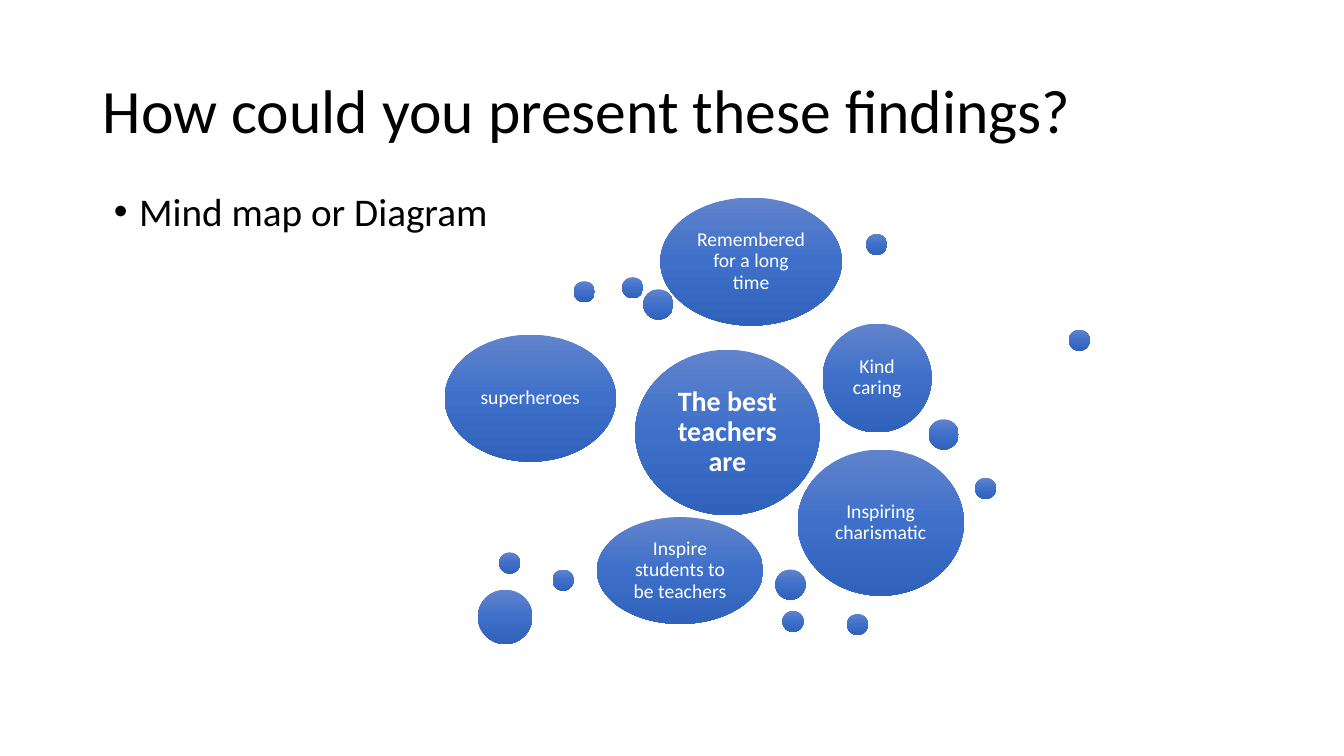
from copy import deepcopy

from pptx import Presentation
from pptx import util as u
from pptx.dml.color import RGBColor
from pptx.enum import shapes, text
from pptx.oxml.ns import qn

INK = {"text": "000000", "label": "FFFFFF",
       "top": "6183CB", "mid": "3E70CA", "low": "3062BB"}

# left, top, width, height, label
BUBBLES = [
    (4.41, 3.32, 1.7, 1.26, "superheroes"),
    (8.16, 3.21, 1.08, 1.08, "Kind caring"),
    (7.91, 4.46, 1.65, 1.45, "Inspiring charismatic"),
    (5.92, 5.13, 1.65, 1.06, "Inspire students to be teachers"),
    (6.55, 1.96, 1.8, 1.27, "Remembered for a long time"),
]

# diameter: (left, top) of each dot
DOTS = {
    0.21: [(6.7, 5.42), (10.6, 3.27), (6.17, 2.75), (5.48, 5.65),
           (4.95, 5.48), (8.4, 6.09), (9.67, 4.74), (7.76, 6.06),
           (5.69, 2.79), (8.59, 2.32)],
    0.3: [(7.69, 5.65), (6.38, 2.87), (9.21, 4.16)],
    0.54: [(4.74, 5.85)],
}


class Deck:
    font = "Calibri"

    def __init__(self, prs):
        self.slide = prs.slides.add_slide(prs.slide_layouts[1])

    def label(self, frame, words, size, ink, align, bold=False):
        frame.word_wrap = True
        frame.auto_size = text.MSO_AUTO_SIZE.NONE
        para = frame.paragraphs[0]
        para.alignment = align
        para.line_spacing = 0.9
        run = para.add_run()
        run.text = words
        run.font.name = self.font
        run.font.size = u.Pt(size)
        run.font.bold = bold
        run.font.color.rgb = RGBColor.from_string(INK[ink])
        return para

    def place(self, holder, box):
        holder.left, holder.top, holder.width, holder.height = map(u.Inches, box)

    def title(self, words, box):
        holder = self.slide.shapes.title
        self.place(holder, box)
        holder.text_frame.vertical_anchor = text.MSO_ANCHOR.MIDDLE
        self.label(holder.text_frame, words, 44, "text", text.PP_ALIGN.LEFT)

    def body(self, words, box):
        holder = self.slide.placeholders[1]
        self.place(holder, box)
        para = self.label(holder.text_frame, words, 28, "text", text.PP_ALIGN.LEFT)
        para.space_before = u.Pt(10)
        props = para._p.get_or_add_pPr()
        props.set("marL", str(u.Inches(0.25)))
        props.set("indent", str(u.Inches(-0.25)))

    def ball(self, *box):
        """Draw an ellipse shaded from top to bottom in three stops."""
        ball = self.slide.shapes.add_shape(
            shapes.MSO_SHAPE.OVAL, *map(u.Inches, box))
        ball.shadow.inherit = False
        ball.line.fill.background()
        ball.fill.gradient()
        ball.fill.gradient_angle = 270
        stops = ball._element.spPr.find(".//" + qn("a:gsLst"))
        stops.insert(1, deepcopy(stops[0]))
        for i, (stop, ink) in enumerate(
                zip(ball.fill.gradient_stops, ("top", "mid", "low"))):
            stop.position = i / 2
            stop.color.rgb = RGBColor.from_string(INK[ink])
        return ball

    def bubble(self, *box, words, size=14, pad=0.06, bold=False):
        frame = self.ball(*box).text_frame
        frame.margin_left = frame.margin_right = u.Inches(pad)
        frame.margin_top = frame.margin_bottom = u.Inches(pad)
        frame.vertical_anchor = text.MSO_ANCHOR.MIDDLE
        self.label(frame, words, size, "label", text.PP_ALIGN.CENTER, bold)


def main():
    prs = Presentation()
    prs.slide_width, prs.slide_height = u.Inches(13.33), u.Inches(7.5)
    deck = Deck(prs)
    deck.title("How could you present these findings?", (0.92, 0.4, 11.5, 1.45))
    deck.body("Mind map or Diagram", (1.03, 1.86, 4.4, 4.76))
    for size, spots in DOTS.items():
        for left, top in spots:
            deck.ball(left, top, size, size)
    deck.bubble(6.3, 3.47, 1.83, 1.64, words="The best teachers are",
                size=20, pad=0.08, bold=True)
    for *box, words in BUBBLES:
        deck.bubble(*box, words=words)
    prs.save("out.pptx")


if __name__ == "__main__":
    main()
